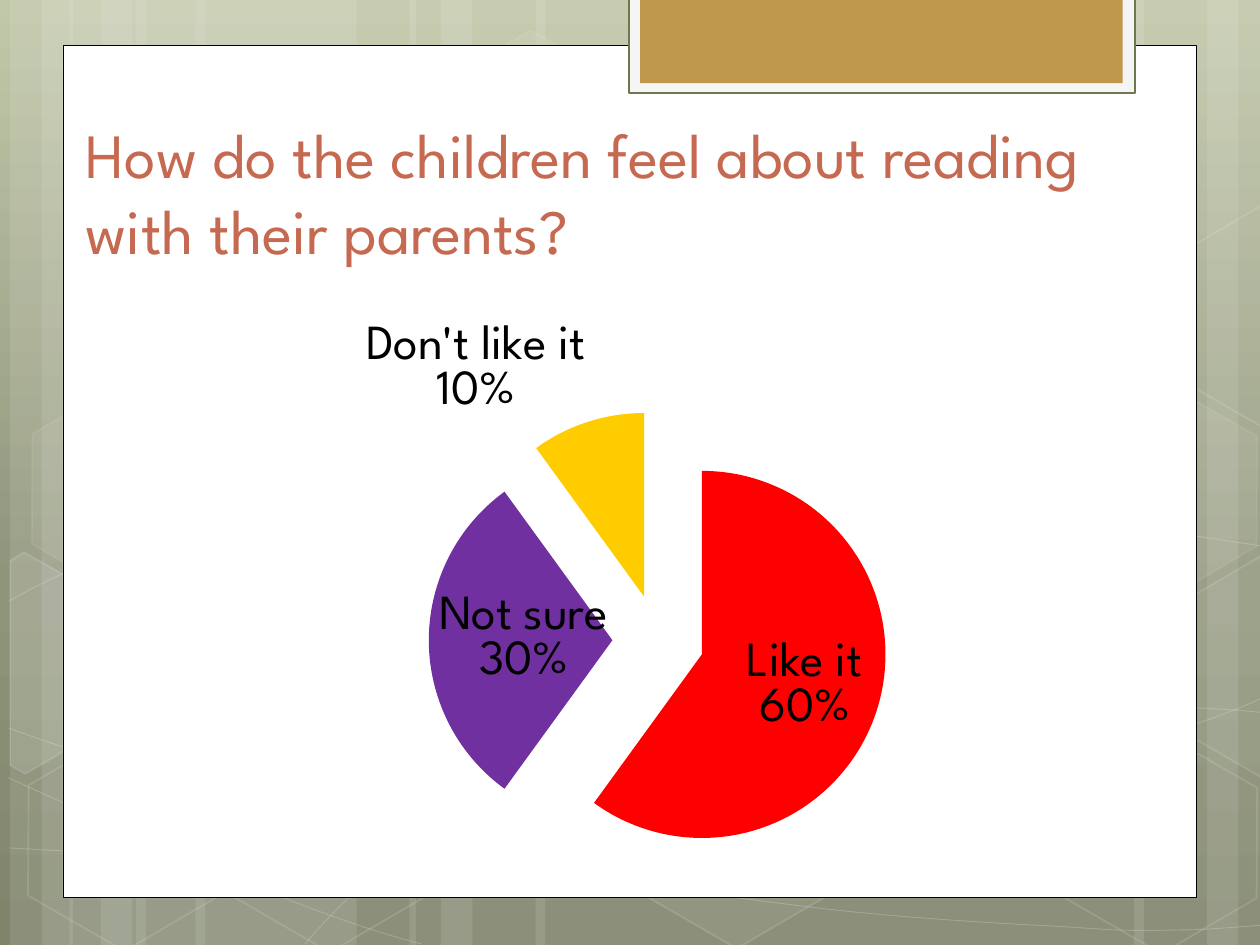
from copy import deepcopy
from math import cos, radians, sin

from lxml import etree
from pptx import Presentation
from pptx.chart.data import CategoryChartData
from pptx.dml.color import RGBColor
from pptx.enum.chart import XL_CHART_TYPE as ChartType, XL_LABEL_POSITION as LabelPosition
from pptx.enum.shapes import MSO_SHAPE as Preset
from pptx.enum.text import MSO_ANCHOR as Anchor, MSO_AUTO_SIZE as AutoSize, PP_ALIGN as Align
from pptx.oxml.ns import qn
from pptx.util import Inches, Pt

COLUMNS, ROWS = 10, 7.5
FONT = "League Spartan"
WHITE = "FFFFFF"
TILT = 30
BACKDROP = [(0, "C1C7A9"), (0.62, "8F957A"), (1, "7F846B")]
BANDS = [
    (1.08, 1.75), (0.08, 0.5), (0.33, 0.83), (1.55, 1.75), (0.55, 0.5), (0.8, 0.83),
    (7.33, 1.75), (9.58, 0.5), (9, 0.83), (4.25, 3.08), (3.25, 0.5), (3.5, 0.83),
]
CURVES = [
    [(0.07, 6.73), (0.61, 6.76), (1.15, 6.79), (1.9, 6.78), (2.65, 6.77), (3.58, 6.75),
     (4.58, 6.65), (5.58, 6.55), (7, 6.36), (7.92, 6.17), (8.83, 5.98), (9.77, 5.68), (10.07, 5.51)],
    [(0.07, 4.77), (0.36, 4.61), (0.65, 4.46), (1.21, 4.31), (1.78, 4.16), (2.59, 3.94),
     (3.47, 3.87), (4.36, 3.8), (5.44, 3.79), (6.54, 3.87), (7.64, 3.95), (9.47, 4.26), (10.07, 4.34)],
    [(0.06, 6.17), (1.27, 6.72), (2.47, 7.27), (3.34, 7.49)],
    [(0.07, 5.78), (0.38, 5.89), (0.7, 6), (1.28, 6.16), (1.86, 6.31), (2.73, 6.56),
     (3.57, 6.73), (4.4, 6.9), (5.45, 7.08), (6.28, 7.18), (7.11, 7.29), (8, 7.33), (8.53, 7.36),
     (9.05, 7.4), (9.19, 7.38), (9.45, 7.38), (9.71, 7.37), (9.89, 7.35), (10.07, 7.34)],
    [(2.42, 7.49), (2.6, 7.29), (2.78, 7.09), (3.02, 6.91), (3.26, 6.73), (3.6, 6.53),
     (3.88, 6.39), (4.16, 6.25), (4.33, 6.19), (4.7, 6.09), (5.06, 5.99), (5.73, 5.85),
     (6.08, 5.78), (6.44, 5.71), (6.49, 5.71), (6.8, 5.69), (7.11, 5.66), (7.6, 5.63),
     (7.94, 5.62), (8.29, 5.61), (8.86, 5.62), (8.86, 5.62), (9.08, 5.62), (9.31, 5.62),
     (9.53, 5.62), (9.71, 5.63), (9.88, 5.64), (9.97, 5.65), (10.06, 5.66), (10.03, 5.65), (10.06, 5.66)],
]
HEXAGONS = [
    (3.34, 0.36, 4, 8), (4.97, 5.89, 6, 12), (0.11, 5.91, 0, 12), (0.14, 3.12, 7, 8),
    (1.74, 5.92, 0, 12), (7.53, 4.53, 10, 12), (8.34, 5.93, 0, 12), (8.34, 3.14, 7, 8),
]
CUT_HEXAGONS = [
    ((0.36, 5.35), [(0.08, 4.45), (0.19, 4.38), (0.96, 4.82), (0.95, 5.7), (0.2, 6.14), (0.08, 6.07)], 10),
    ((9.85, 5.2), [(9.26, 4.85), (10.01, 4.41), (10.09, 4.46), (10.09, 6.13), (10.02, 6.17), (9.26, 5.73)], 4),
    ((9.85, 2.41), [(9.26, 2.07), (10.01, 1.63), (10.1, 1.68), (10.09, 3.35), (10.02, 3.39), (9.26, 2.95)], 0),
]
ANSWERS = [("Like it", 60, "FF0000"), ("Not sure", 30, "7030A0"), ("Don't like it", 10, "FFCC00")]


def rgb(code):
    """Turn a hex string into a colour."""
    return RGBColor.from_string(code)


def paint(fill, code, opacity=100):
    """Fill with a colour at an opacity in percent, or clear the fill."""
    if not code or not opacity:
        fill.background()
        return
    fill.solid()
    fill.fore_color.rgb = rgb(code)
    if opacity < 100:
        color = fill._xPr.find(".//" + qn("a:srgbClr"))
        etree.SubElement(color, qn("a:alpha")).set("val", str(opacity * 1000))


def dress(shape, fill=None, opacity=100, line=None, width=1, line_opacity=100):
    """Set the fill and outline of a shape and drop its shadow."""
    shape.shadow.inherit = False
    paint(shape.fill, fill, opacity)
    paint(shape.line.fill, line, line_opacity)
    if line:
        shape.line.width = Pt(width)
    return shape


def add_preset(page, kind, at, **style):
    """Add a preset shape on the one-inch grid."""
    return dress(page.shapes.add_shape(kind, *map(Inches, at)), **style)


def add_outline(page, points, close, **style):
    """Add a freeform through points on the one-inch grid."""
    start, *others = [(Inches(x), Inches(y)) for x, y in points]
    builder = page.shapes.build_freeform(*start, scale=1.0)
    builder.add_line_segments(others, close=close)
    return dress(builder.convert_to_shape(), line=WHITE, **style)


def bend(shape):
    """Join each three straight segments of a freeform into one cubic curve."""
    segments = shape._element.findall(".//" + qn("a:lnTo"))
    for first in range(0, len(segments), 3):
        curve = etree.Element(qn("a:cubicBezTo"))
        segments[first].addprevious(curve)
        for segment in segments[first:first + 3]:
            curve.append(segment[0])
            segment.getparent().remove(segment)


def turn_back(points, center):
    """Undo the tilt of points around a center."""
    across, down = center
    c, s = cos(radians(TILT)), sin(radians(TILT))
    return [(across + (x - across) * c + (y - down) * s,
             down + (y - down) * c - (x - across) * s) for x, y in points]


def set_backdrop(page):
    """Give the page its vertical three-colour gradient."""
    fill = page.background.fill
    fill.gradient()
    fill.gradient_angle = 270
    stops = page._element.find(".//" + qn("a:gsLst"))
    stops.append(deepcopy(stops[-1]))
    for stop, (position, code) in zip(fill.gradient_stops, BACKDROP):
        stop.position = position
        stop.color.rgb = rgb(code)


def add_decoration(page):
    """Add the translucent bands, curves and hexagons."""
    for left, width in BANDS:
        add_preset(page, Preset.RECTANGLE, (left, 0, width, ROWS), fill=WHITE, opacity=10)
    for knots in CURVES:
        bend(add_outline(page, knots, False, width=0.5, line_opacity=20))
    for left, top, opacity, line_opacity in HEXAGONS:
        hexagon = add_preset(page, Preset.HEXAGON, (left, top, 1.75, 1.52), fill=WHITE,
                             opacity=opacity, line=WHITE, line_opacity=line_opacity)
        hexagon.adjustments[0] = 0.285
        hexagon.rotation = TILT
    for center, points, opacity in CUT_HEXAGONS:
        cut = add_outline(page, turn_back(points, center), True, fill=WHITE, opacity=opacity, line_opacity=12)
        cut.rotation = TILT


def add_card(page):
    """Add the white card and the tab at its top."""
    add_preset(page, Preset.RECTANGLE, (0.5, 0.36, 9, 6.76), fill=WHITE, line="000000", width=0.5)
    add_preset(page, Preset.RECTANGLE, (4.99, -0.02, 4.02, 0.76), fill="F5F5F5", line="6E774E", width=1.25)
    add_preset(page, Preset.RECTANGLE, (5.08, -0.02, 3.83, 0.68), fill="BF974D")


def set_plot_area(chart, **shares):
    """Fix the inner plot area by shares of the chart's size."""
    area = chart._chartSpace.find(".//" + qn("c:plotArea"))
    layout = area.find(qn("c:layout"))
    if layout is None:
        layout = etree.Element(qn("c:layout"))
        area.insert(0, layout)
    manual = etree.SubElement(layout, qn("c:manualLayout"))
    settings = {"layoutTarget": "inner", "xMode": "edge", "yMode": "edge", **shares}
    for name, value in settings.items():
        etree.SubElement(manual, qn("c:" + name)).set("val", str(value))


def add_pie(page):
    """Add the exploded pie of answers."""
    data = CategoryChartData()
    data.categories = [name for name, _, _ in ANSWERS]
    data.add_series("Series 1", [value for _, value, _ in ANSWERS])
    at = map(Inches, (0.5, 2.42, 9, 4.67))
    chart = page.shapes.add_chart(ChartType.PIE_EXPLODED, *at, data).chart
    chart.has_title = chart.has_legend = False
    chart.font.name, chart.font.size = FONT, Pt(28)
    chart.font.color.rgb = rgb("000000")
    plot = chart.plots[0]
    plot.vary_by_categories = True
    series = plot.series[0]
    for index, (_, _, code) in enumerate(ANSWERS):
        paint(series.points[index].format.fill, code)
    labels = series.data_labels
    labels.show_value = False
    labels.show_category_name = labels.show_percentage = True
    labels.number_format, labels.number_format_is_linked = "0%", False
    labels.position = LabelPosition.BEST_FIT
    separator = etree.Element(qn("c:separator"))
    separator.text = "\n"
    labels._element.find(qn("c:showBubbleSize")).addnext(separator)
    set_plot_area(chart, x=0.32, y=0.18, w=0.41, h=0.78)


def set_title(page, text):
    """Place and format the title above the chart."""
    title = page.shapes.title
    title.left, title.top, title.width, title.height = map(Inches, (0.58, 0.92, 8.83, 1.25))
    frame = title.text_frame
    frame.word_wrap, frame.auto_size = True, AutoSize.NONE
    frame.vertical_anchor = Anchor.BOTTOM
    para = frame.paragraphs[0]
    para.alignment = Align.LEFT
    span = para.add_run()
    span.text = text
    span.font.name, span.font.size = FONT, Pt(36)
    span.font.color.rgb = rgb("C66951")
    page.shapes._spTree.append(title._element)


def main():
    """Build the deck and save it."""
    deck = Presentation()
    deck.slide_width, deck.slide_height = Inches(COLUMNS), Inches(ROWS)
    page = deck.slides.add_slide(deck.slide_layouts[5])
    set_backdrop(page)
    add_decoration(page)
    add_card(page)
    add_pie(page)
    set_title(page, "How do the children feel about reading with their parents?")
    deck.save("out.pptx")


if __name__ == "__main__":
    main()
